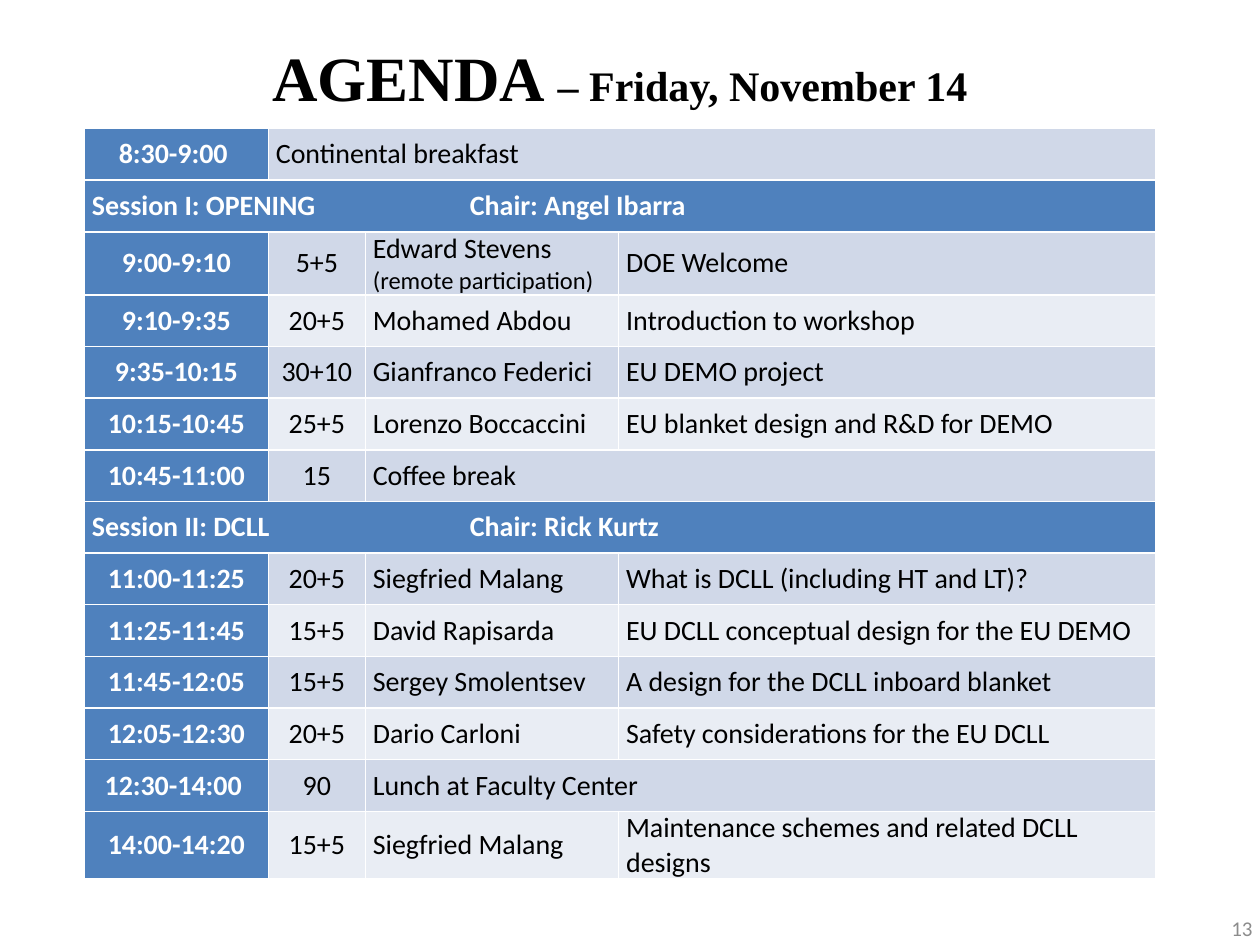
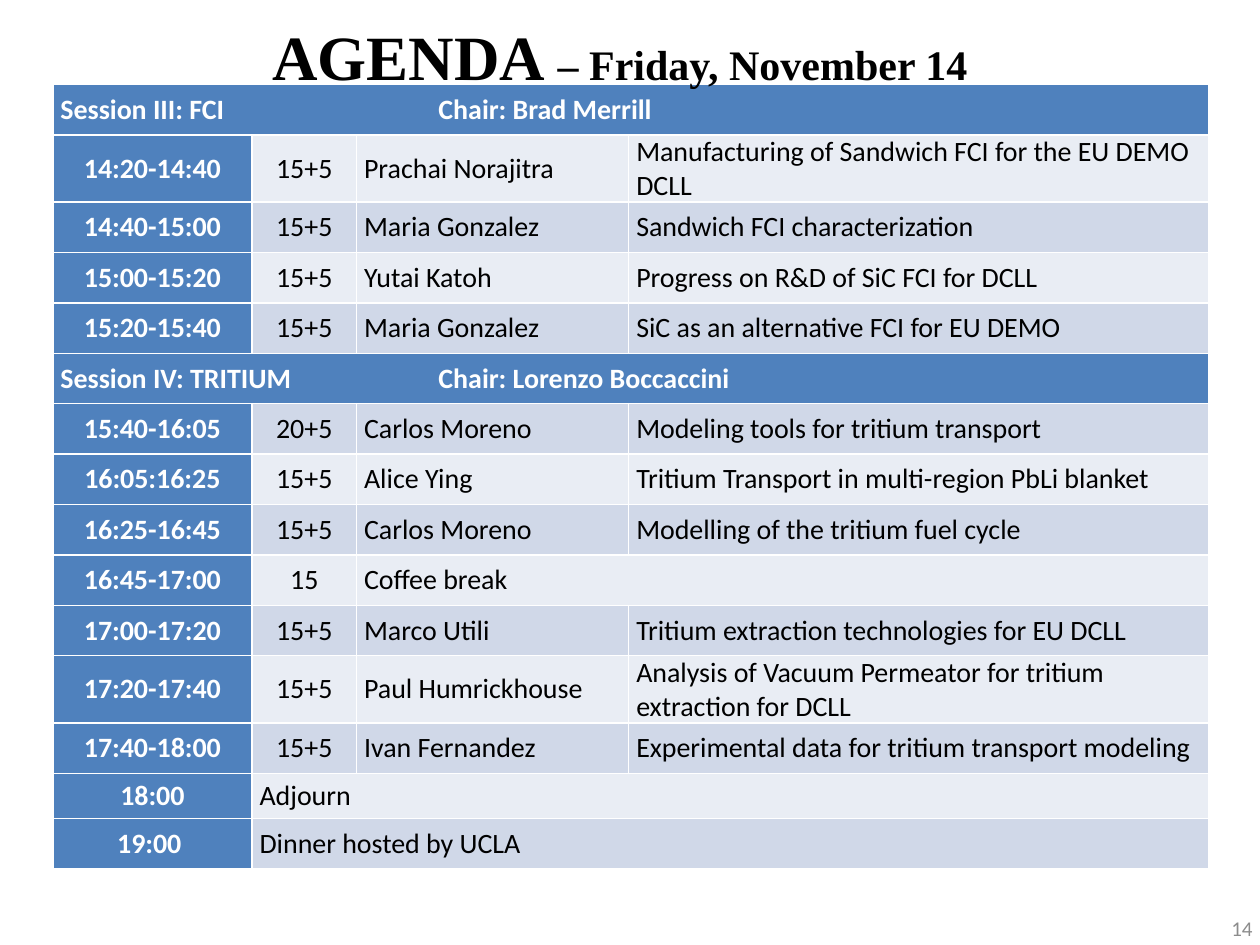
from lxml.etree import SubElement
from pptx import Presentation
from pptx.dml.color import RGBColor
from pptx.enum.text import MSO_ANCHOR, MSO_AUTO_SIZE, PP_ALIGN
from pptx.oxml.ns import qn
from pptx.util import Inches, Pt

# Shared style
BLUE = RGBColor(0x4F, 0x81, 0xBD)
DARK_BAND = RGBColor(0xD0, 0xD8, 0xE8)
LIGHT_BAND = RGBColor(0xE9, 0xED, 0xF4)
WHITE = RGBColor(0xFF, 0xFF, 0xFF)
BLACK = RGBColor(0, 0, 0)
GRAY = RGBColor(0x8C, 0x8C, 0x8C)
BODY_FONT = "Calibri"
TITLE_FONT = "Times New Roman"
CHAIR_TAB = Inches(3)

# One entry: session and chair. Two: time and event. Three: time, minutes and event.
# Four: time, minutes, speaker and topic. A tuple holds a name and a smaller remark.
MORNING = [
    ["8:30-9:00 ", "Continental breakfast"],
    ["Session I: OPENING\tChair: Angel Ibarra"],
    ["9:00-9:10", "5+5", ("Edward Stevens ", "(remote participation)"), "DOE Welcome"],
    ["9:10-9:35", "20+5", "Mohamed Abdou", "Introduction to workshop"],
    ["9:35-10:15", "30+10", "Gianfranco Federici", "EU DEMO project"],
    ["10:15-10:45", "25+5", "Lorenzo Boccaccini", "EU blanket design and R&D for DEMO"],
    ["10:45-11:00", "15", "Coffee break"],
    ["Session II: DCLL\tChair: Rick Kurtz"],
    ["11:00-11:25", "20+5", "Siegfried Malang", "What is DCLL (including HT and LT)?"],
    ["11:25-11:45", "15+5", "David Rapisarda", "EU DCLL conceptual design for the EU DEMO"],
    ["11:45-12:05", "15+5", "Sergey Smolentsev", "A design for the DCLL inboard blanket"],
    ["12:05-12:30", "20+5", "Dario Carloni", "Safety considerations for the EU DCLL"],
    ["12:30-14:00 ", "90", "Lunch at Faculty Center"],
    ["14:00-14:20", "15+5", "Siegfried Malang", "Maintenance schemes and related DCLL designs"],
]
AFTERNOON = [
    ["Session III: FCI\tChair: Brad Merrill"],
    ["14:20-14:40", "15+5", "Prachai Norajitra", "Manufacturing of Sandwich FCI for the EU DEMO DCLL"],
    ["14:40-15:00", "15+5", "Maria Gonzalez", "Sandwich FCI characterization"],
    ["15:00-15:20", "15+5", "Yutai Katoh", "Progress on R&D of SiC FCI for DCLL"],
    ["15:20-15:40", "15+5", "Maria Gonzalez", "SiC as an alternative FCI for EU DEMO"],
    ["Session IV: TRITIUM\tChair: Lorenzo Boccaccini"],
    ["15:40-16:05", "20+5", "Carlos Moreno", "Modeling tools for tritium transport"],
    ["16:05:16:25", "15+5", "Alice Ying", "Tritium Transport in multi-region PbLi blanket"],
    ["16:25-16:45", "15+5", "Carlos Moreno", "Modelling of the tritium fuel cycle"],
    ["16:45-17:00", "15", "Coffee break"],
    ["17:00-17:20", "15+5", "Marco Utili", "Tritium extraction technologies for EU DCLL"],
    ["17:20-17:40", "15+5", "Paul Humrickhouse", "Analysis of Vacuum Permeator for tritium extraction for DCLL"],
    ["17:40-18:00", "15+5", "Ivan Fernandez", "Experimental data for tritium transport modeling"],
    ["18:00", "Adjourn"],
    ["19:00 ", "Dinner hosted by UCLA"],
]


def style_font(font, name, size, color, bold=False):
    font.name = name
    font.size = Pt(size)
    font.color.rgb = color
    font.bold = bold


def add_text_box(slide, left, top, width, height):
    box = slide.shapes.add_textbox(Inches(left), Inches(top), Inches(width), Inches(height))
    box.text_frame.word_wrap = True
    return box.text_frame


def add_title(slide, top):
    frame = add_text_box(slide, 0.67, top, 8.5, 0.8)
    frame.auto_size = MSO_AUTO_SIZE.SHAPE_TO_FIT_TEXT
    frame.margin_top = Inches(0.13)
    paragraph = frame.paragraphs[0]
    paragraph.alignment = PP_ALIGN.CENTER
    paragraph.line_spacing = 1.15
    paragraph.space_after = Pt(6)
    for text, size in (("AGENDA ", 36), ("– Friday, November 14", 24)):
        run = paragraph.add_run()
        run.text = text
        style_font(run.font, TITLE_FONT, size, BLACK, True)


def add_page_number(slide, number):
    frame = add_text_box(slide, 7.71, 7.17, 2.33, 0.4)
    frame.vertical_anchor = MSO_ANCHOR.MIDDLE
    paragraph = frame.paragraphs[0]
    paragraph.text = str(number)
    paragraph.alignment = PP_ALIGN.RIGHT
    style_font(paragraph.font, BODY_FONT, 12, GRAY)


def add_borders(cell):
    properties = cell._tc.get_or_add_tcPr()
    for side in ("a:lnL", "a:lnR", "a:lnT", "a:lnB"):
        line = SubElement(properties, qn(side), w=str(Pt(1)))
        fill = SubElement(line, qn("a:solidFill"))
        SubElement(fill, qn("a:srgbClr"), val=str(WHITE))


def format_cell(cell, color):
    add_borders(cell)
    cell.fill.solid()
    cell.fill.fore_color.rgb = color
    cell.vertical_anchor = MSO_ANCHOR.MIDDLE
    cell.margin_left = cell.margin_right = Inches(0.06)
    cell.margin_top = cell.margin_bottom = 0


def write_cell(cell, content, centered, heading):
    paragraph = cell.text_frame.paragraphs[0]
    text, remark = content if isinstance(content, tuple) else (content, None)
    paragraph.add_run().text = text
    if "\t" in text:
        tabs = SubElement(paragraph._p.get_or_add_pPr(), qn("a:tabLst"))
        SubElement(tabs, qn("a:tab"), pos=str(CHAIR_TAB), algn="l")
    paragraph.alignment = PP_ALIGN.CENTER if centered else PP_ALIGN.LEFT
    color = WHITE if heading else BLACK
    # Runs carry the font so that the remark can be smaller
    style_font(paragraph.runs[0].font, BODY_FONT, 16, color, heading)
    if remark:
        run = paragraph.add_run()
        run.text = remark
        style_font(run.font, BODY_FONT, 14, color, heading)


def add_agenda(slide, entries, left, top, column_widths, row_height, low_rows):
    frame = slide.shapes.add_table(
        len(entries), len(column_widths), Inches(left), Inches(top),
        Inches(sum(column_widths)), Inches(row_height * len(entries)))
    table = frame.table
    table.first_row = table.horz_banding = False
    for column, width in zip(table.columns, column_widths):
        column.width = Inches(width)
    last_column = len(column_widths) - 1

    for row, entry in enumerate(entries):
        table.rows[row].height = Inches(low_rows.get(row, row_height))
        band = LIGHT_BAND if row % 2 else DARK_BAND
        last_entry = len(entry) - 1
        for column in range(last_column + 1):
            heading = column == 0 or last_entry == 0
            format_cell(table.cell(row, column), BLUE if heading else band)
        for column, content in enumerate(entry):
            centered = column < min(2, last_entry)
            write_cell(table.cell(row, column), content, centered, column == 0)
        # The last entry runs to the right edge
        if last_entry < last_column:
            table.cell(row, last_entry).merge(table.cell(row, last_column))


def main():
    presentation = Presentation()
    presentation.slide_width = Inches(10)
    presentation.slide_height = Inches(7.5)
    blank = presentation.slide_layouts[6]

    # Morning sessions
    slide = presentation.slides.add_slide(blank)
    add_page_number(slide, 13)
    add_title(slide, 0.09)
    add_agenda(slide, MORNING, 0.67, 1.02, [1.46, 0.77, 2.01, 4.26], 0.41, {})

    # Afternoon sessions
    slide = presentation.slides.add_slide(blank)
    add_page_number(slide, 14)
    add_agenda(slide, AFTERNOON, 0.42, 0.67, [1.58, 0.83, 2.16, 4.6], 0.4, {13: 0.36})
    add_title(slide, -0.08)

    presentation.save("out.pptx")


if __name__ == "__main__":
    main()
